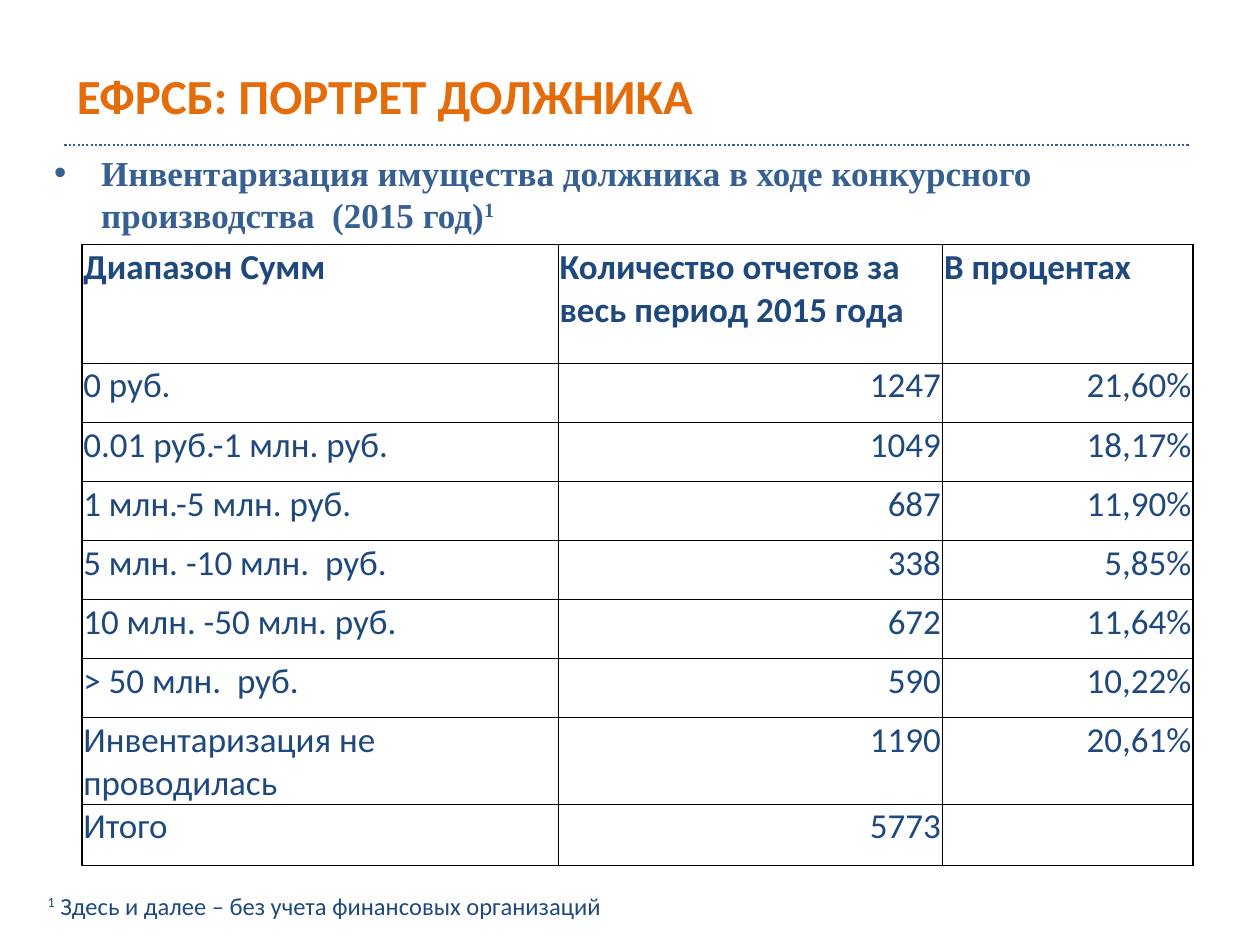
from lxml import etree
from pptx import Presentation
from pptx.dml.color import RGBColor
from pptx.enum.dml import MSO_LINE
from pptx.enum.shapes import MSO_CONNECTOR
from pptx.enum.text import MSO_ANCHOR, PP_ALIGN
from pptx.oxml.ns import qn
from pptx.util import Cm, Pt

LEFT, RIGHT = PP_ALIGN.LEFT, PP_ALIGN.RIGHT
TOP, MIDDLE = MSO_ANCHOR.TOP, MSO_ANCHOR.MIDDLE
STRAIGHT, DOTTED = MSO_CONNECTOR.STRAIGHT, MSO_LINE.ROUND_DOT

# Content
TITLE = "ЕФРСБ: ПОРТРЕТ ДОЛЖНИКА"
SUBTITLE = "Инвентаризация имущества должника в ходе конкурсного производства  (2015 год)"
FOOTNOTE = " Здесь и далее – без учета финансовых организаций"
MARK = "1"
ROWS = [
    ("Диапазон Сумм", "Количество отчетов за весь период 2015 года", "В процентах"),
    ("0 руб.", "1247", "21,60%"),
    ("0.01 руб.-1 млн. руб.", "1049", "18,17%"),
    ("1 млн.-5 млн. руб.", "687", "11,90%"),
    ("5 млн. -10 млн.  руб.", "338", "5,85%"),
    ("10 млн. -50 млн. руб.", "672", "11,64%"),
    ("> 50 млн.  руб.", "590", "10,22%"),
    ("Инвентаризация не проводилась", "1190", "20,61%"),
    ("Итого", "5773", ""),
]
COL_WIDTHS = [9.6, 7.75, 5.05]
ROW_HEIGHTS = [2.39] + [1.19] * 6 + [1.75, 1.24]

THEME = {
    "title": dict(size=28, color="E46C0A", bold=True, font="Calibri"),
    "subtitle": dict(size=20, color="376092", bold=True, font="Times New Roman"),
    "head": dict(size=20, color="1F497D", bold=True, font="Calibri"),
    "cell": dict(size=20, color="1F497D", bold=False, font="Calibri"),
    "note": dict(size=14, color="1F497D", bold=False, font="Calibri"),
    "rule": "376092",
    "border": "000000",
    "fill": "FFFFFF",
}


def add_text(p, text, *, size, color, bold, font, align=LEFT, superscript=False):
    p.alignment = align
    r = p.add_run()
    r.text = text
    r.font.size, r.font.bold, r.font.name = Pt(size), bold, font
    r.font.color.rgb = RGBColor.from_string(color)
    if superscript:
        r.font._element.set("baseline", "30000")


def add_box(s, left, top, width, height, anchor=TOP):
    tf = s.shapes.add_textbox(Cm(left), Cm(top), Cm(width), Cm(height)).text_frame
    tf.word_wrap = True
    tf.vertical_anchor = anchor
    return tf.paragraphs[0]


def set_bullet(p, indent):
    pPr = p._p.get_or_add_pPr()
    pPr.set("marL", str(Cm(indent)))
    pPr.set("indent", str(-Cm(indent)))
    etree.SubElement(pPr, qn("a:buFont")).set("typeface", "Arial")
    etree.SubElement(pPr, qn("a:buChar")).set("char", "•")


def set_borders(cell, widths):
    # Borders must precede the fill in the cell properties
    tcPr = cell._tc.get_or_add_tcPr()
    for i, (side, width) in enumerate(widths.items()):
        ln = etree.Element(qn(f"a:ln{side}"), w=str(Pt(width)))
        fill = etree.SubElement(ln, qn("a:solidFill"))
        etree.SubElement(fill, qn("a:srgbClr")).set("val", THEME["border"])
        tcPr.insert(i, ln)


def add_grid(s, left, top):
    last_row, last_col = len(ROWS) - 1, len(COL_WIDTHS) - 1
    table = s.shapes.add_table(len(ROWS), len(COL_WIDTHS), Cm(left), Cm(top),
                               Cm(sum(COL_WIDTHS)), Cm(sum(ROW_HEIGHTS))).table
    table.first_row = table.horz_banding = False
    for col, width in zip(table.columns, COL_WIDTHS):
        col.width = Cm(width)
    for i, (row, height) in enumerate(zip(ROWS, ROW_HEIGHTS)):
        table.rows[i].height = Cm(height)
        for j, text in enumerate(row):
            cell = table.cell(i, j)
            cell.margin_left = cell.margin_right = cell.margin_top = Cm(0.03)
            cell.margin_bottom = 0
            cell.fill.solid()
            cell.fill.fore_color.rgb = RGBColor.from_string(THEME["fill"])
            outer = {"L": j == 0, "R": j == last_col, "T": i == 0, "B": i == last_row}
            set_borders(cell, {side: 1 if edge else 0.5 for side, edge in outer.items()})
            add_text(cell.text_frame.paragraphs[0], text,
                     align=RIGHT if i and j else LEFT,
                     **THEME["cell" if i else "head"])


def main():
    prs = Presentation()
    prs.slide_width, prs.slide_height = Cm(25.4), Cm(19.05)
    s = prs.slides.add_slide(prs.slide_layouts[6])

    # Title
    p = add_box(s, 1.3, 0.33, 22.86, 3.18, MIDDLE)
    add_text(p, TITLE, **THEME["title"])

    # Subtitle with bullet
    p = add_box(s, 0.84, 2.92, 23.62, 1.19)
    p.space_before = p.space_after = Pt(6)
    set_bullet(p, 0.95)
    add_text(p, SUBTITLE, **THEME["subtitle"])
    add_text(p, MARK, superscript=True, **THEME["subtitle"])

    # Dotted rule
    rule = s.shapes.add_connector(STRAIGHT, Cm(1.3), Cm(2.92), Cm(24), Cm(2.92))
    rule.line.color.rgb = RGBColor.from_string(THEME["rule"])
    rule.line.width = Pt(1.25)
    rule.line.dash_style = DOTTED
    etree.SubElement(rule._element.spPr, qn("a:effectLst"))

    # Table
    add_grid(s, 1.65, 4.93)

    # Footnote
    p = add_box(s, 0.71, 17.83, 22.68, 0.86)
    add_text(p, MARK, superscript=True, **THEME["note"])
    add_text(p, FOOTNOTE, **THEME["note"])

    prs.save("out.pptx")


if __name__ == "__main__":
    main()
